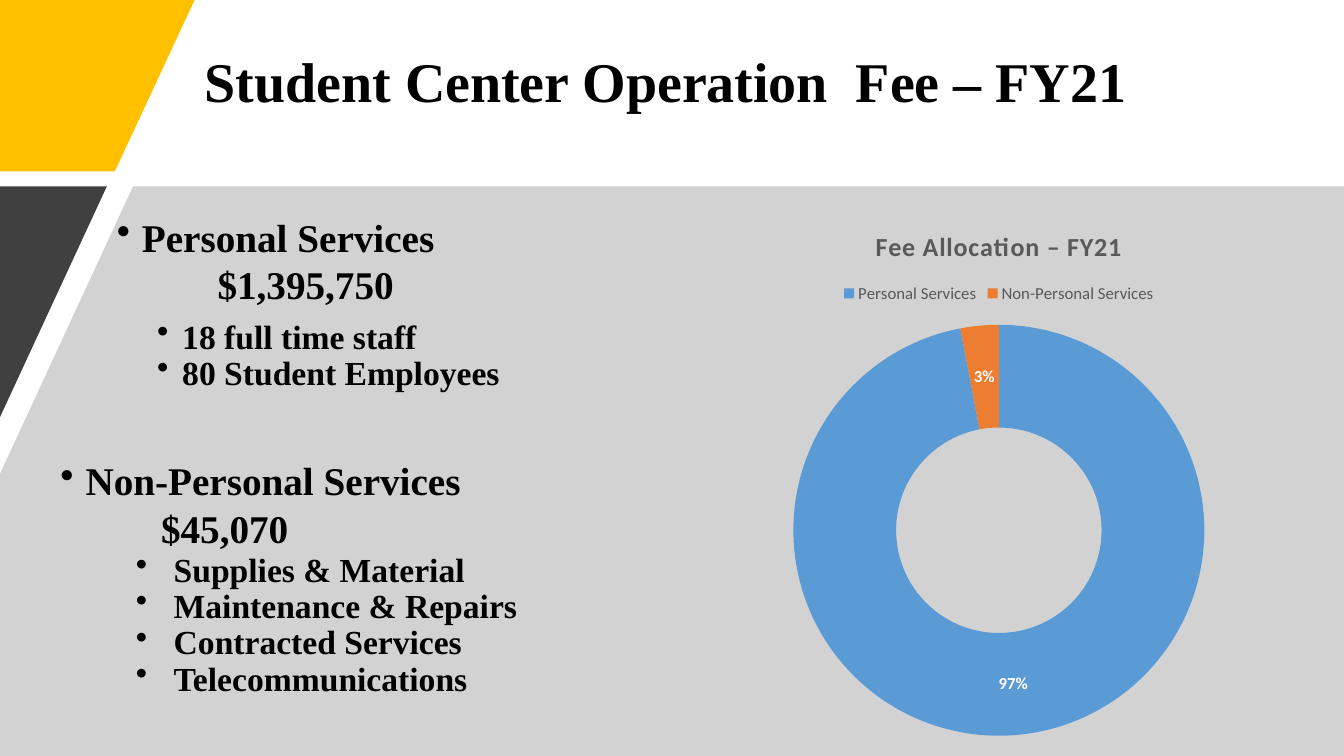
from dataclasses import dataclass

import lxml.etree
import pptx
import pptx.chart.data
import pptx.dml.color
import pptx.enum.chart
import pptx.oxml.ns
import pptx.util

Pt = pptx.util.Pt


@dataclass(frozen=True)
class Theme:
    heading_font: str = "Times New Roman"
    chart_font: str = "Calibri"
    text: str = "000000"
    yellow: str = "FFC000"
    grey: str = "A6A6A6"
    charcoal: str = "404040"
    chart_text: str = "595959"
    label_text: str = "FFFFFF"
    slices: tuple[str, ...] = ("5B9BD5", "ED7D31")
    title_size: float = 40
    heading_size: float = 28
    item_size: float = 24
    chart_title_size: float = 18.6
    chart_label_size: float = 12
    chart_size: float = 10


@dataclass(frozen=True)
class Panel:
    corners: tuple[tuple[float, float], ...]
    color: str
    opacity: int = 100


@dataclass(frozen=True)
class Line:
    text: str
    indent: float = 0
    hanging: float = 0


@dataclass(frozen=True)
class TextBlock:
    left: float
    top: float
    width: float
    height: float
    size: float
    pitch: float
    lines: tuple[Line, ...]


THEME = Theme()

PANELS = (
    Panel(((0, 0), (139, 0), (82.1, 122.4), (0, 122.4)), THEME.yellow),
    Panel(((95, 133.2), (960, 133.2), (960, 540), (0, 540), (0, 338.4)), THEME.grey, 50),
    Panel(((0, 133.2), (76.3, 133.2), (0, 298)), THEME.charcoal),
)


def service(left: float, top: float, name: str, amount: str) -> TextBlock:
    """A bulleted fee category with its amount indented below."""
    lines = (Line(name, 18, 18), Line(amount, 72))
    return TextBlock(left, top, 400, 75, THEME.heading_size, 33.8, lines)


def items(left: float, top: float, indent: float, hanging: float, *names: str) -> TextBlock:
    """A bulleted list of the parts of a fee category."""
    lines = tuple(Line(name, indent, hanging) for name in names)
    height = 26 * len(names) + 8
    return TextBlock(left, top, 380, height, THEME.item_size, 26, lines)


TEXT_BLOCKS = (
    TextBlock(139, 33.8, 737, 52, THEME.title_size, 44,
              (Line("Student Center Operation  Fee – FY21"),)),
    service(76.3, 148.3, "Personal Services", "$1,395,750"),
    items(69.1, 224.6, 54, 18, "18 full time staff", "80 Student Employees"),
    service(36, 322.5, "Non-Personal Services", "$45,070"),
    items(90, 391, 27, 27, "Supplies & Material", "Maintenance & Repairs",
          "Contracted Services", "Telecommunications"),
)


def rgb(color: str) -> pptx.dml.color.RGBColor:
    return pptx.dml.color.RGBColor.from_string(color)


def add_child(parent, tag: str, **attributes: str):
    child = lxml.etree.SubElement(parent, pptx.oxml.ns.qn(tag))
    for name, value in attributes.items():
        child.set(name, value)
    return child


def set_font(font, name: str, size: float, color: str, bold: bool) -> None:
    font.name = name
    font.size = Pt(size)
    font.color.rgb = rgb(color)
    font.bold = bold


def add_panel(page, panel: Panel) -> None:
    points = [(Pt(x), Pt(y)) for x, y in panel.corners]
    builder = page.shapes.build_freeform(*points[0])
    builder.add_line_segments(points[1:], close=True)
    shape = builder.convert_to_shape()
    shape.shadow.inherit = False
    shape.line.fill.background()
    shape.fill.solid()
    shape.fill.fore_color.rgb = rgb(panel.color)
    if panel.opacity < 100:
        color = shape._element.spPr.find(".//" + pptx.oxml.ns.qn("a:srgbClr"))
        add_child(color, "a:alpha", val=str(panel.opacity * 1000))


def add_text_block(page, block: TextBlock) -> None:
    box = page.shapes.add_textbox(
        Pt(block.left), Pt(block.top), Pt(block.width), Pt(block.height))
    frame = box.text_frame
    frame.word_wrap = True
    for number, line in enumerate(block.lines):
        para = frame.add_paragraph() if number else frame.paragraphs[0]
        para.text = line.text
        para.line_spacing = Pt(block.pitch)
        set_font(para.font, THEME.heading_font, block.size, THEME.text, True)
        properties = para._p.get_or_add_pPr()
        properties.set("marL", str(Pt(line.indent)))
        properties.set("indent", str(-Pt(line.hanging)))
        if line.hanging:
            bullet = lxml.etree.Element(pptx.oxml.ns.qn("a:buChar"), char="•")
            properties.find(pptx.oxml.ns.qn("a:defRPr")).addprevious(bullet)


def set_plot_area(chart, **bounds: float) -> None:
    """Place the inner plot area by fractions of the chart frame."""
    plot_area = chart._chartSpace.chart.plotArea
    for old in plot_area.findall(pptx.oxml.ns.qn("c:layout")):
        plot_area.remove(old)
    layout = lxml.etree.Element(pptx.oxml.ns.qn("c:layout"))
    manual = add_child(layout, "c:manualLayout")
    add_child(manual, "c:layoutTarget", val="inner")
    for mode in ("xMode", "yMode"):
        add_child(manual, f"c:{mode}", val="edge")
    for name, value in bounds.items():
        add_child(manual, f"c:{name}", val=str(value))
    plot_area.insert(0, layout)


def add_fee_chart(page) -> None:
    fees = pptx.chart.data.CategoryChartData()
    fees.categories = ["Personal Services", "Non-Personal Services"]
    fees.add_series("Series 1", (97, 3))
    chart = page.shapes.add_chart(
        pptx.enum.chart.XL_CHART_TYPE.DOUGHNUT,
        Pt(451.4), Pt(148.3), Pt(524.2), Pt(387.4), fees).chart
    set_font(chart.font, THEME.chart_font, THEME.chart_size, THEME.text, False)

    chart.has_title = True
    para = chart.chart_title.text_frame.paragraphs[0]
    span = para.add_run()
    span.text = "Fee Allocation – FY21"
    set_font(span.font, THEME.chart_font, THEME.chart_title_size, THEME.chart_text, True)
    span._r.get_or_add_rPr().set("spc", "50")
    chart.chart_title.include_in_layout = False

    chart.has_legend = True
    chart.legend.position = pptx.enum.chart.XL_LEGEND_POSITION.TOP
    chart.legend.include_in_layout = False
    set_font(chart.legend.font, THEME.chart_font, THEME.chart_label_size,
             THEME.chart_text, False)

    plot = chart.plots[0]
    plot.vary_by_categories = True
    for index, color in enumerate(THEME.slices):
        slice_format = plot.series[0].points[index].format
        slice_format.fill.solid()
        slice_format.fill.fore_color.rgb = rgb(color)
        slice_format.line.fill.background()
    labels = plot.series[0].data_labels
    labels.show_percentage = True
    labels.show_value = False
    labels.number_format = "0%"
    labels.number_format_is_linked = False
    set_font(labels.font, THEME.chart_font, THEME.chart_label_size,
             THEME.label_text, True)
    set_plot_area(chart, x=0.22, y=0.21, w=0.56, h=0.77)


def main() -> None:
    deck = pptx.Presentation()
    deck.slide_width, deck.slide_height = Pt(960), Pt(540)
    page = deck.slides.add_slide(deck.slide_layouts[6])
    for panel in PANELS:
        add_panel(page, panel)
    add_fee_chart(page)
    for block in TEXT_BLOCKS:
        add_text_block(page, block)
    deck.save("out.pptx")


if __name__ == "__main__":
    main()
